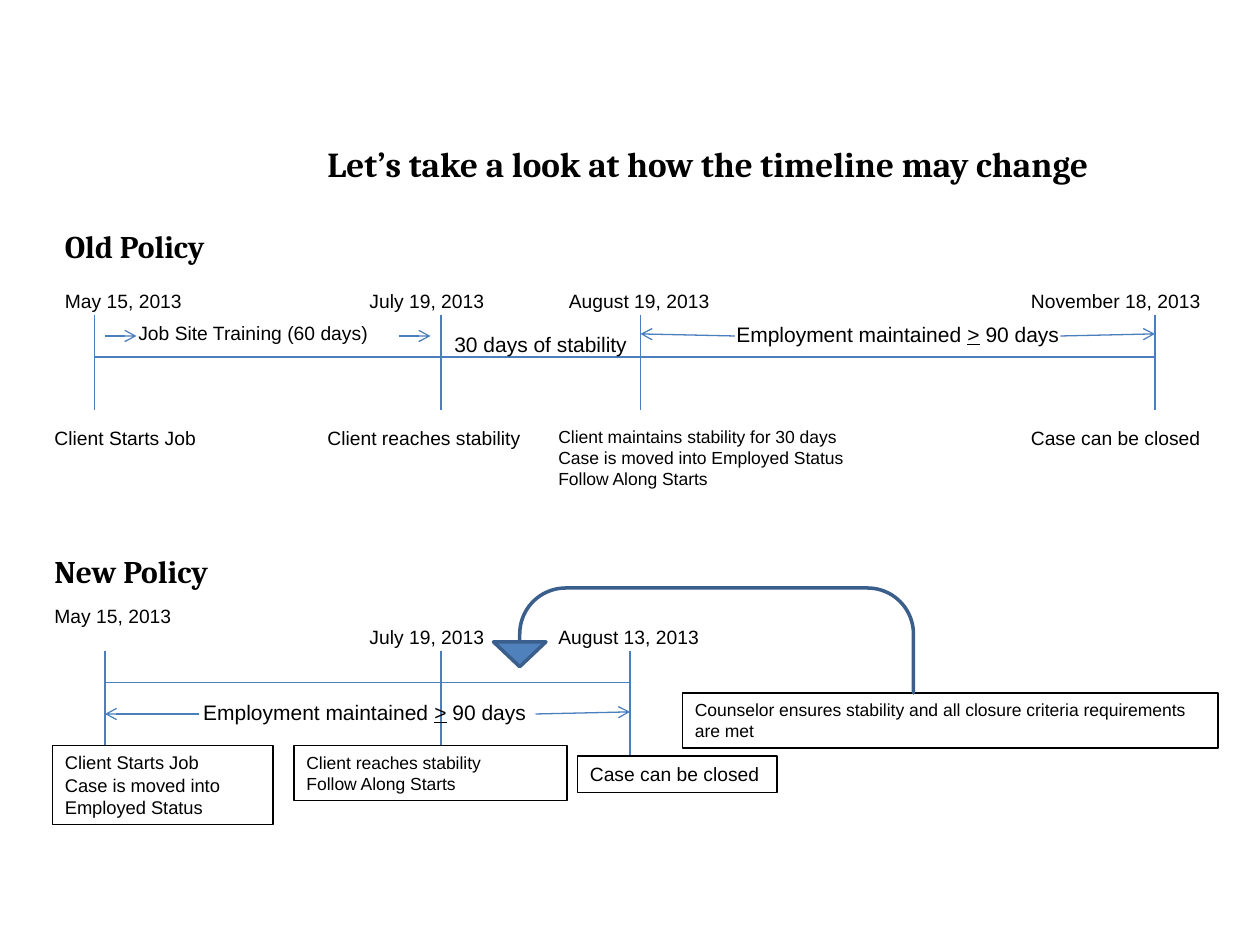
from lxml.etree import SubElement
from pptx import Presentation
from pptx.dml.color import RGBColor
from pptx.enum.shapes import MSO_CONNECTOR as Connector, MSO_SHAPE as Shape
from pptx.enum.text import MSO_AUTO_SIZE as AutoSize, PP_ALIGN as Align
from pptx.oxml.ns import qn
from pptx.util import Inches, Pt


def color(value):
    return RGBColor.from_string(value)


class TimelineSlide:
    COLUMNS, ROWS = 120, 90
    INK, AXIS, ARROW_FILL, ARROW_LINE = "000000", "4B7EBC", "4F81BD", "3A5F8C"
    BODY, HEADING = "Arial", "Cambria"

    def __init__(self, presentation):
        self.slide = presentation.slides.add_slide(presentation.slide_layouts[6])
        self.column = presentation.slide_width / self.COLUMNS
        self.row = presentation.slide_height / self.ROWS

    def x(self, columns):
        return round(columns * self.column)

    def y(self, rows):
        return round(rows * self.row)

    def frame(self, left, top, width, height):
        return self.x(left), self.y(top), self.x(width), self.y(height)

    def text(self, left, top, width, height, text, size=11, font=BODY, bold=False, align=Align.LEFT):
        shape = self.slide.shapes.add_textbox(*self.frame(left, top, width, height))
        text_frame = shape.text_frame
        text_frame.word_wrap = True
        text_frame.auto_size = AutoSize.SHAPE_TO_FIT_TEXT
        text_frame.text = text
        for paragraph in text_frame.paragraphs:
            paragraph.alignment = align
            for run in paragraph.runs:
                self.format_run(run, size, font, bold)
        return shape

    def format_run(self, run, size, font, bold=False):
        run.font.size = Pt(size)
        run.font.name = font
        run.font.bold = bold
        run.font.color.rgb = color(self.INK)

    def heading(self, left, top, width, height, text, size=18):
        self.text(left, top, width, height, text, size, self.HEADING, True)

    def boxed(self, left, top, width, height, text, size):
        shape = self.text(left, top, width, height, text, size)
        shape.line.color.rgb = color(self.INK)
        shape.line.width = Pt(0.75)

    def employment(self, left, top, width, ending):
        shape = self.text(left, top, width, 3.6, "Employment maintained ", 12, align=Align.CENTER)
        paragraph = shape.text_frame.paragraphs[0]
        for part in (">", ending):
            run = paragraph.add_run()
            run.text = part
            self.format_run(run, 12, self.BODY)
            run.font.underline = part == ">"

    def line(self, start, end, arrow=False):
        connector = self.slide.shapes.add_connector(
            Connector.STRAIGHT, self.x(start[0]), self.y(start[1]), self.x(end[0]), self.y(end[1]))
        connector.line.color.rgb = color(self.AXIS)
        connector.line.width = Pt(0.75)
        if arrow:
            SubElement(connector.line._get_or_add_ln(), qn("a:tailEnd"), type="arrow")
        SubElement(connector._element.spPr, qn("a:effectLst"))

    def timeline(self, row, top, ticks):
        self.line((ticks[0][0], row), (ticks[-1][0], row))
        for column, bottom in ticks:
            self.line((column, top), (column, bottom))

    def return_arrow(self, left, top, width, height):
        shape = self.slide.shapes.add_shape(Shape.U_TURN_ARROW, *self.frame(left, top, width, height))
        for index, value in enumerate((0, 0.25, 0.237, 0.438, 0.75)):
            shape.adjustments[index] = value
        shape._element.spPr.get_or_add_xfrm().set("flipH", "1")
        shape.shadow.inherit = False
        shape.fill.solid()
        shape.fill.fore_color.rgb = color(self.ARROW_FILL)
        shape.line.color.rgb = color(self.ARROW_LINE)
        shape.line.width = Pt(2)


def main():
    presentation = Presentation()
    presentation.slide_width, presentation.slide_height = Inches(10), Inches(7.5)
    page = TimelineSlide(presentation)

    page.heading(30, 13, 85, 5.25, "Let’s take a look at how the timeline may change", 20)
    page.heading(5, 21, 20, 5, "Old Policy")
    page.heading(4, 52, 20, 5, "New Policy")

    page.timeline(34, 30, [(column, 39) for column in (9, 42, 61, 110)])
    page.timeline(65, 62, [(10, 71), (42, 71), (60, 72)])

    for left, top, width, text in (
        (5, 27, 16, "May 15, 2013"),
        (34, 27, 16, "July 19, 2013"),
        (53, 27, 16, "August 19, 2013"),
        (97, 27, 20, "November 18, 2013"),
        (12, 30, 25, "Job Site Training (60 days)"),
        (4, 40, 16, "Client Starts Job"),
        (30, 40, 22, "Client reaches stability"),
        (97, 40, 19, "Case can be closed"),
        (4, 57, 16, "May 15, 2013"),
        (34, 59, 16, "July 19, 2013"),
        (52, 59, 16, "August 13, 2013"),
    ):
        page.text(left, top, width, 3.5, text)

    page.text(52, 40, 31, 9.25,
              "Client maintains stability for 30 days\nCase is moved into Employed Status\nFollow Along Starts", 10)
    page.text(42, 31, 19, 3.6, "30 days of stability ", 12, align=Align.CENTER)
    page.employment(61, 30, 49, " 90 days")
    page.employment(10, 66, 50, " 90 days ")

    page.boxed(5, 71, 21, 7.5, "Client Starts Job\nCase is moved into Employed Status", 10.5)
    page.boxed(28, 71, 26, 5.25, "Client reaches stability\nFollow Along Starts", 10)
    page.boxed(55, 72, 19, 3.5, "Case can be closed", 11)
    page.boxed(65, 66, 51, 5.25,
               "Counselor ensures stability and all closure criteria requirements are met", 10)
    page.return_arrow(47, 56, 40, 10)

    for start, end in (
        ((10, 32), (13, 32)),
        ((38, 32), (41, 32)),
        ((70, 32), (61, 31.8)),
        ((101, 32), (110, 31.8)),
        ((19, 68), (10, 68)),
        ((51, 68), (60, 67.8)),
    ):
        page.line(start, end, arrow=True)

    presentation.save("out.pptx")


if __name__ == "__main__":
    main()
